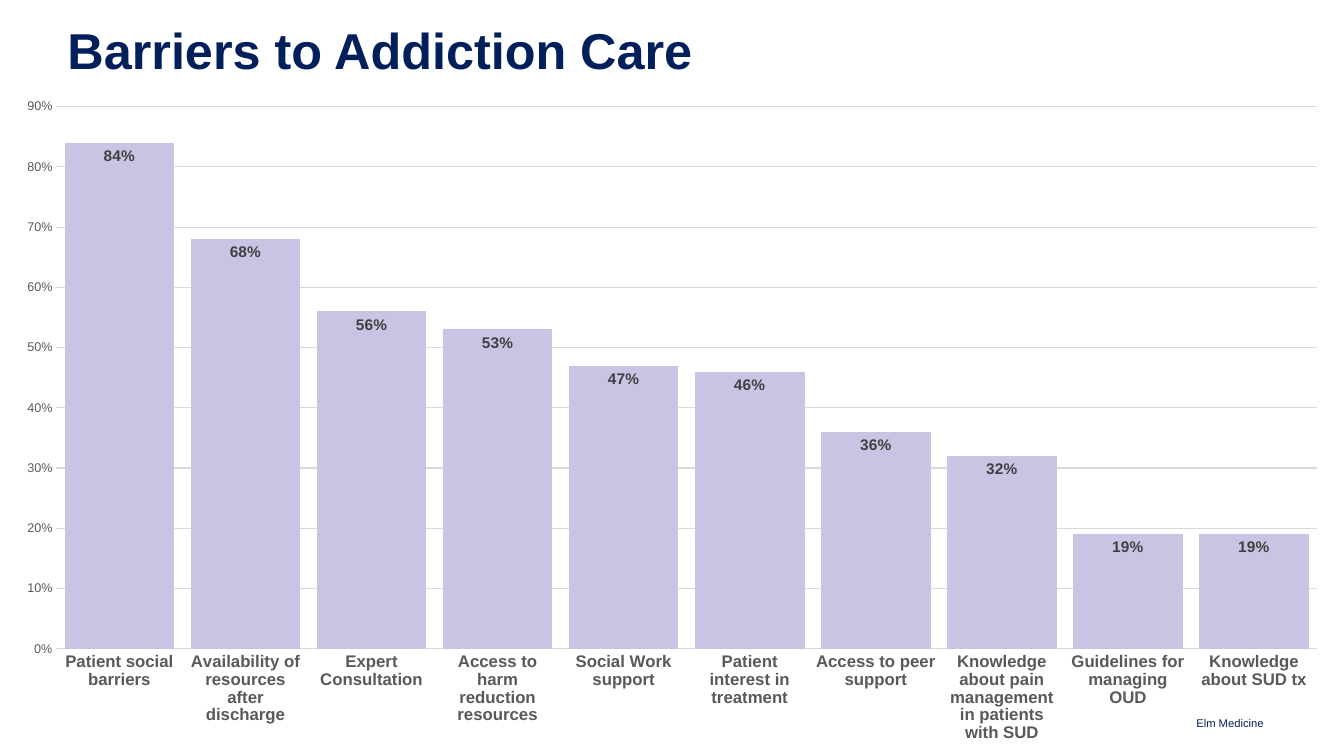
import pptx
import pptx.chart.data
import pptx.dml.color
import pptx.enum.chart
import pptx.enum.text
import pptx.oxml
import pptx.oxml.ns
import pptx.util
from pptx.util import Cm


def color(value):
    return pptx.dml.color.RGBColor.from_string(value)


def style(font, size, value, bold=False):
    font.name = "Arial"
    font.size = pptx.util.Pt(size)
    font.bold = bold
    font.color.rgb = color(value)


barriers = [
    ("Patient social barriers", 0.84),
    ("Availability of resources after discharge", 0.68),
    ("Expert Consultation", 0.56),
    ("Access to harm reduction resources", 0.53),
    ("Social Work support", 0.47),
    ("Patient interest in treatment", 0.46),
    ("Access to peer support", 0.36),
    ("Knowledge about pain management in patients with SUD", 0.32),
    ("Guidelines for managing OUD", 0.19),
    ("Knowledge about SUD tx", 0.19),
]

prs = pptx.Presentation()
prs.slide_width, prs.slide_height = Cm(33.87), Cm(19.05)
s = prs.slides.add_slide(prs.slide_layouts[6])

ANCHOR, ALIGN = pptx.enum.text.MSO_ANCHOR, pptx.enum.text.PP_ALIGN
texts = [
    ("Elm Medicine", (25.15, 17.88, 6.7, 0.5), ANCHOR.BOTTOM, ALIGN.RIGHT, 1, 8, False),
    ("Barriers to Addiction Care", (1.7, 0.66, 29.87, 2.51), ANCHOR.TOP, ALIGN.LEFT, 0.9, 36, True),
]
for text, box, anchor, align, spacing, size, bold in texts:
    tf = s.shapes.add_textbox(*map(Cm, box)).text_frame
    tf.word_wrap = True
    tf.vertical_anchor = anchor
    tf.margin_left = tf.margin_top = tf.margin_right = tf.margin_bottom = 0
    p = tf.paragraphs[0]
    p.alignment = align
    p.line_spacing = spacing
    r = p.add_run()
    r.text = text
    style(r.font, size, "011F5B", bold)

data = pptx.chart.data.CategoryChartData(number_format="0%")
data.categories = [name for name, share in barriers]
data.add_series("Series 1", [share for name, share in barriers])
chart = s.shapes.add_chart(
    pptx.enum.chart.XL_CHART_TYPE.COLUMN_CLUSTERED,
    Cm(0), Cm(2.18), Cm(33.87), Cm(16.87), data,
).chart
chart.has_legend = False
chart.has_title = False
style(chart.font, 10, "000000")

plot = chart.plots[0]
plot.gap_width = 15
plot.overlap = -27
plot.vary_by_categories = False
fill = plot.series[0].format.fill
fill.solid()
fill.fore_color.rgb = color("CBC3E3")

plot.has_data_labels = True
labels = plot.data_labels
labels.show_value = True
labels.position = pptx.enum.chart.XL_LABEL_POSITION.INSIDE_END
labels.number_format = "0%"
labels.number_format_is_linked = False
style(labels.font, 11, "404040", True)

cat_axis, val_axis = chart.category_axis, chart.value_axis
for axis, size, bold in ((cat_axis, 12, True), (val_axis, 9, False)):
    axis.major_tick_mark = pptx.enum.chart.XL_TICK_MARK.NONE
    axis.minor_tick_mark = pptx.enum.chart.XL_TICK_MARK.NONE
    style(axis.tick_labels.font, size, "595959", bold)

val_axis.minimum_scale, val_axis.maximum_scale, val_axis.major_unit = 0, 0.9, 0.1
val_axis.tick_labels.number_format = "0%"
val_axis.tick_labels.number_format_is_linked = False
val_axis.format.line.fill.background()
for line in (cat_axis.format.line, val_axis.major_gridlines.format.line):
    line.color.rgb = color("D9D9D9")
    line.width = pptx.util.Pt(0.75)

plot_area = chart.element.find(".//" + pptx.oxml.ns.qn("c:plotArea"))
for layout in plot_area.findall(pptx.oxml.ns.qn("c:layout")):
    plot_area.remove(layout)
plot_area.insert(0, pptx.oxml.parse_xml(
    f'<c:layout {pptx.oxml.ns.nsdecls("c")}><c:manualLayout>'
    '<c:layoutTarget val="inner"/><c:xMode val="edge"/><c:yMode val="edge"/>'
    '<c:x val="0.042"/><c:y val="0.03"/><c:w val="0.938"/><c:h val="0.81"/>'
    '</c:manualLayout></c:layout>'
))

prs.save("out.pptx")
